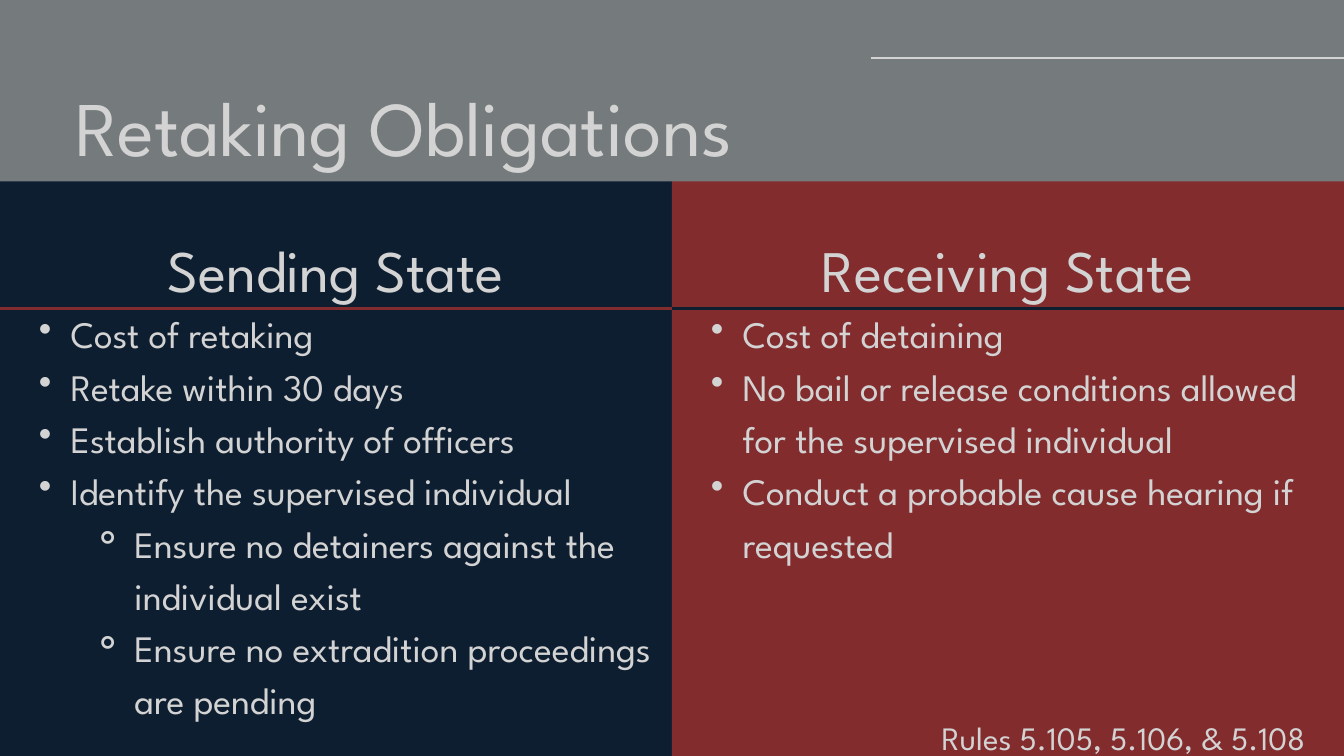
from lxml import etree
from pptx import Presentation
from pptx.dml.color import RGBColor
from pptx.enum import shapes, text
from pptx.oxml.ns import qn
from pptx.util import Inches, Pt

GREY = RGBColor(0x75, 0x7A, 0x7C)
LIGHT = RGBColor(0xD3, 0xD3, 0xD3)
RED = RGBColor(0x82, 0x2C, 0x2E)
NAVY = RGBColor(0x0E, 0x1E, 0x31)
FONT = "League Spartan"
W, H, TOP = 20, 11.25, 2.7
BULLETS = {1: ("•", 0.94, -0.47), 2: ("⚬", 1.89, -0.63)}

SENDING = [
    (1, "Cost of retaking"),
    (1, "Retake within 30 days"),
    (1, "Establish authority of officers"),
    (1, "Identify the supervised individual"),
    (2, "Ensure no detainers against the individual exist"),
    (2, "Ensure no extradition proceedings are pending"),
]
RECEIVING = [
    (1, "Cost of detaining"),
    (1, "No bail or release conditions allowed for the supervised individual"),
    (1, "Conduct a probable cause hearing if requested"),
]


def set_frame(tf):
    frame = dict(margin_left=0, margin_top=0, margin_right=0, margin_bottom=0,
                 word_wrap=True, auto_size=text.MSO_AUTO_SIZE.NONE,
                 vertical_anchor=text.MSO_ANCHOR.TOP)
    for name, value in frame.items():
        setattr(tf, name, value)


def add_box(slide, x, y, w, h):
    tf = slide.shapes.add_textbox(Inches(x), Inches(y), Inches(w), Inches(h)).text_frame
    set_frame(tf)
    return tf


def write(p, words, size, spacing, align=text.PP_ALIGN.LEFT):
    p.alignment, p.line_spacing = align, Pt(spacing)
    r = p.add_run()
    r.text = words
    r.font.size, r.font.name = Pt(size), FONT
    r.font.color.rgb = LIGHT


def add_bullet(p, level):
    char, left, indent = BULLETS[level]
    p.level = level
    pPr = p._p.get_or_add_pPr()
    pPr.set("marL", str(Inches(left)))
    pPr.set("indent", str(Inches(indent)))
    etree.SubElement(pPr, qn("a:buChar")).set("char", char)


def add_rule(slide, x1, x2, y, color, width):
    line = slide.shapes.add_connector(shapes.MSO_CONNECTOR.STRAIGHT,
                                      Inches(x1), Inches(y), Inches(x2), Inches(y))
    line.line.color.rgb = color
    line.line.width = Pt(width)
    etree.SubElement(line._element.spPr, qn("a:effectLst"))


def add_header(slide, x, y, w, h):
    title = slide.shapes.title
    title.left, title.top, title.width, title.height = map(Inches, (x, y, w, h))
    set_frame(title.text_frame)
    write(title.text_frame.paragraphs[0], "Retaking Obligations", 82.8, 115.9)
    add_rule(slide, 12.96, W, 0.87, LIGHT, 2.25)


def add_column(slide, x, y, w, h, heading, items, fill, rule):
    """Coloured panel with a heading, a rule under it and a bulleted list."""
    panel = slide.shapes.add_shape(shapes.MSO_SHAPE.RECTANGLE,
                                   Inches(x), Inches(y), Inches(w), Inches(h))
    panel.shadow.inherit = False
    panel.fill.solid()
    panel.fill.fore_color.rgb = fill
    panel.line.fill.background()

    tf = add_box(slide, x + 0.11, y + 0.6, w - 0.23, h - 1.16)
    write(tf.paragraphs[0], heading, 63, 88.2, text.PP_ALIGN.CENTER)
    for level, words in items:
        p = tf.add_paragraph()
        add_bullet(p, level)
        write(p, words, 40, 56)
    add_rule(slide, x, x + w, y + 1.89, rule, 3)


def add_rules_note(slide, x, y, w, h):
    tf = add_box(slide, x, y, w, h)
    write(tf.paragraphs[0], "Rules 5.105, 5.106, & 5.108", 35, 49, text.PP_ALIGN.CENTER)


def main():
    prs = Presentation()
    prs.slide_width, prs.slide_height = Inches(W), Inches(H)
    slide = prs.slides.add_slide(prs.slide_layouts[5])
    slide.background.fill.solid()
    slide.background.fill.fore_color.rgb = GREY

    add_header(slide, 1.12, 0.95, 18.5, 1.55)
    columns = [("Sending State", SENDING, NAVY, RED),
               ("Receiving State", RECEIVING, RED, NAVY)]
    col_w = W / len(columns)
    for i, column in enumerate(columns):
        add_column(slide, i * col_w, TOP, col_w, H - TOP, *column)
    add_rules_note(slide, 13.44, 10.59, 6.56, 0.66)
    prs.save("out.pptx")


if __name__ == "__main__":
    main()
